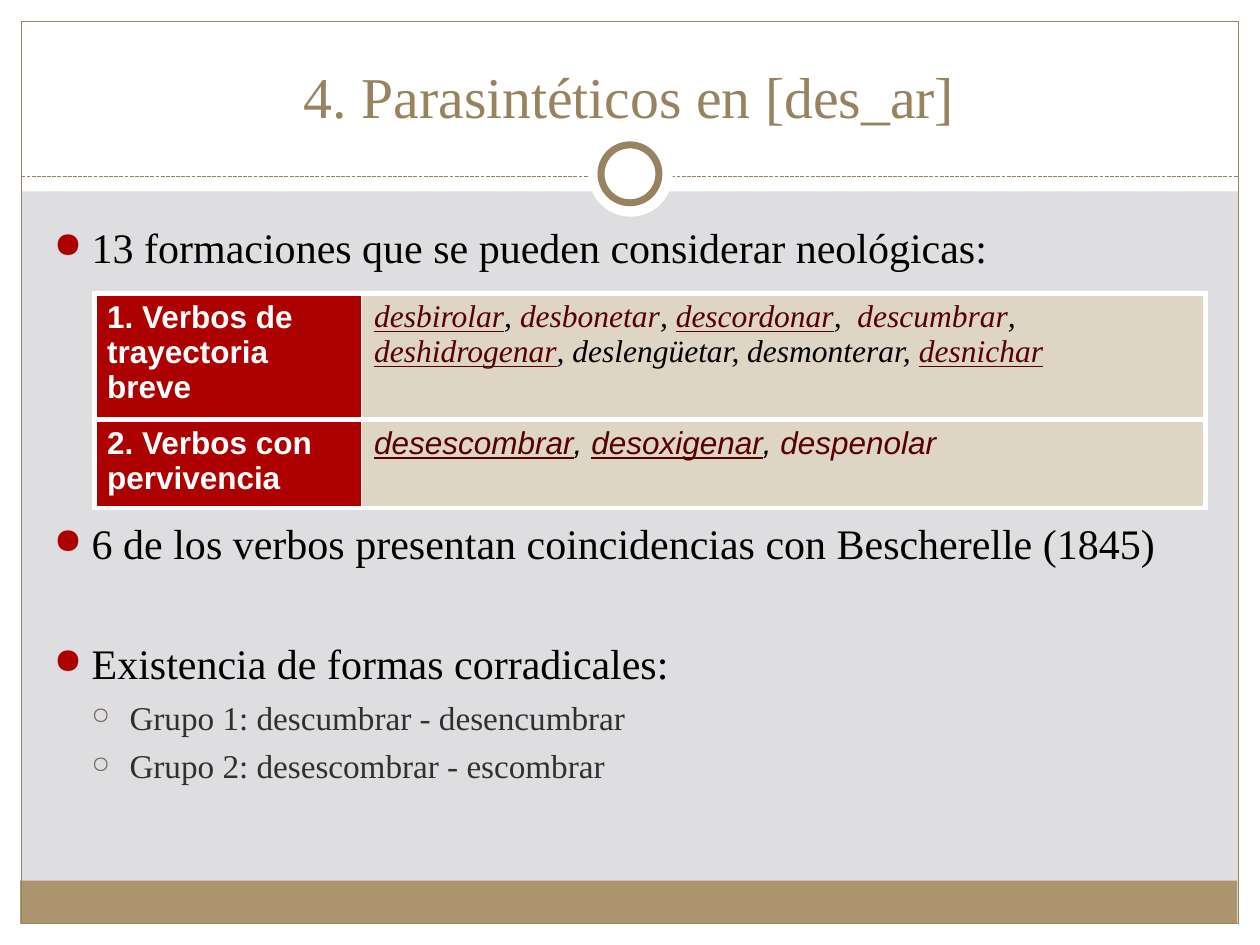
from typing import NamedTuple

from lxml import etree
from pptx import Presentation
from pptx.dml.color import RGBColor
from pptx.enum.dml import MSO_LINE
from pptx.enum.shapes import MSO_CONNECTOR, MSO_SHAPE
from pptx.enum.text import MSO_ANCHOR, PP_ALIGN
from pptx.oxml.ns import qn
from pptx.util import Inches, Pt

RECTANGLE, OVAL = MSO_SHAPE.RECTANGLE, MSO_SHAPE.OVAL
STRAIGHT = MSO_CONNECTOR.STRAIGHT
DASH = MSO_LINE.SQUARE_DOT
BOTTOM, CENTER = MSO_ANCHOR.BOTTOM, PP_ALIGN.CENTER
SERIF, SANS = "Times New Roman", "Arial"
COLORS = {
    "background": "DEDEE0", "white": "FFFFFF", "band": "AC956E",
    "frame": "988361", "title": "978360", "black": "000000",
    "red": "AD0101", "cell": "DED5C5", "verb": "560000",
    "detail": "303030", "detail bullet": "726056",
}


class Block(NamedTuple):
    left: float
    top: float
    width: float
    height: float
    fill: str | None = "white"
    line: str | None = None
    weight: float = 0.75
    kind: MSO_SHAPE = RECTANGLE


class Level(NamedTuple):
    indent: float
    size: float
    color: str
    bullet: str
    bullet_color: str
    bullet_percent: int


class Item(NamedTuple):
    text: str
    level: int
    space_before: float


class Verb(NamedTuple):
    text: str
    color: str = "verb"
    underline: bool = False


class Row(NamedTuple):
    heading: str
    font: str
    height: float
    verbs: list[Verb]


BLOCKS = [
    Block(0, 7.33, 10, 0.17),
    Block(0, 0, 10, 1.52),
    Block(0, 0, 0.17, 7.5),
    Block(9.83, 0, 0.17, 7.5),
    Block(0.16, 6.99, 9.66, 0.34, "band"),
    Block(0.17, 0.17, 9.66, 7.16, None, "frame"),
]
RING = [
    Block(4.67, 1.05, 0.67, 0.67, kind=OVAL),
    Block(4.77, 1.15, 0.46, 0.46, "white", "frame", 4, OVAL),
]
LEVELS = [
    Level(0.3, 24, "black", "●", "red", 85),
    Level(0.6, 19, "detail", "○", "detail bullet", 70),
]
ITEMS = [
    Item("13 formaciones que se pueden considerar neológicas:", 0, 0),
    Item("6 de los verbos presentan coincidencias con Bescherelle (1845)", 0, 140.4),
    Item("Existencia de formas corradicales:", 0, 39.8),
    Item("Grupo 1: descumbrar - desencumbrar", 1, 5),
    Item("Grupo 2: desescombrar - escombrar", 1, 5),
]
COMMA = Verb(", ", "black")
ROWS = [
    Row("1. Verbos de trayectoria breve", SERIF, 0.94, [
        Verb("desbirolar", underline=True), COMMA, Verb("desbonetar"), COMMA,
        Verb("descordonar", underline=True), Verb(",  ", "black"),
        Verb("descumbrar"), COMMA, Verb("deshidrogenar", underline=True),
        Verb(", deslengüetar, desmonterar, ", "black"),
        Verb("desnichar", underline=True),
    ]),
    Row("2. Verbos con pervivencia", SANS, 0.65, [
        Verb("desescombrar", underline=True), COMMA,
        Verb("desoxigenar", underline=True), COMMA, Verb("despenolar"),
    ]),
]
COLUMN_WIDTHS = [2.12, 6.7]


def rgb(name: str) -> RGBColor:
    return RGBColor.from_string(COLORS[name])


def set_font(font, name: str, size: float, color: str) -> None:
    font.name, font.size = name, Pt(size)
    font.color.rgb = rgb(color)


def draw_block(slide, block: Block) -> None:
    shape = slide.shapes.add_shape(
        block.kind, Inches(block.left), Inches(block.top),
        Inches(block.width), Inches(block.height))
    shape.shadow.inherit = False
    if block.fill:
        shape.fill.solid()
        shape.fill.fore_color.rgb = rgb(block.fill)
    else:
        shape.fill.background()
    if block.line:
        shape.line.color.rgb = rgb(block.line)
        shape.line.width = Pt(block.weight)
    else:
        shape.line.fill.background()


def draw_divider(slide) -> None:
    line = slide.shapes.add_connector(
        STRAIGHT, Inches(0.17), Inches(1.4), Inches(9.83), Inches(1.4))
    line.line.color.rgb = rgb("frame")
    line.line.width = Pt(0.75)
    line.line.dash_style = DASH
    etree.SubElement(line._element.spPr, qn("a:effectLst"))


def add_text_frame(slide, left: float, top: float, width: float, height: float):
    box = slide.shapes.add_textbox(
        Inches(left), Inches(top), Inches(width), Inches(height))
    box.text_frame.word_wrap = True
    return box.text_frame


def set_bullet(paragraph, level: Level) -> None:
    properties = paragraph._p.get_or_add_pPr()
    properties.set("marL", str(Inches(level.indent)))
    properties.set("indent", str(Inches(-0.3)))
    color = etree.SubElement(properties, qn("a:buClr"))
    etree.SubElement(color, qn("a:srgbClr"), val=COLORS[level.bullet_color])
    etree.SubElement(properties, qn("a:buSzPct"), val=str(level.bullet_percent * 1000))
    etree.SubElement(properties, qn("a:buChar"), char=level.bullet)


def draw_items(slide) -> None:
    frame = add_text_frame(slide, 0.33, 1.67, 9.3, 5)
    frame.margin_top = Inches(0.09)
    for index, item in enumerate(ITEMS):
        paragraph = frame.add_paragraph() if index else frame.paragraphs[0]
        level = LEVELS[item.level]
        paragraph.text = item.text
        paragraph.level = item.level
        paragraph.space_before = Pt(item.space_before)
        set_bullet(paragraph, level)
        set_font(paragraph.font, SERIF, level.size, level.color)


def style_cell(cell, fill: str, inner_side: str) -> None:
    properties = cell._tc.get_or_add_tcPr()
    for side in ("lnL", "lnR", "lnT", "lnB"):
        weight = 1 if side == inner_side else 3
        border = etree.SubElement(properties, qn(f"a:{side}"), w=str(Pt(weight)))
        solid = etree.SubElement(border, qn("a:solidFill"))
        etree.SubElement(solid, qn("a:srgbClr"), val=COLORS["white"])
    cell.fill.solid()
    cell.fill.fore_color.rgb = rgb(fill)


def draw_table(slide) -> None:
    table = slide.shapes.add_table(
        len(ROWS), len(COLUMN_WIDTHS), Inches(0.75), Inches(2.33),
        Inches(sum(COLUMN_WIDTHS)), Inches(sum(row.height for row in ROWS))).table
    for column, width in zip(table.columns, COLUMN_WIDTHS):
        column.width = Inches(width)
    for index, row in enumerate(ROWS):
        table.rows[index].height = Inches(row.height)
        heading, verbs = table.cell(index, 0), table.cell(index, 1)
        style_cell(heading, "red", "lnR")
        style_cell(verbs, "cell", "lnL")
        heading.text = row.heading
        paragraph = heading.text_frame.paragraphs[0]
        set_font(paragraph.font, SANS, 18, "white")
        paragraph.font.bold = True
        paragraph = verbs.text_frame.paragraphs[0]
        for verb in row.verbs:
            run = paragraph.add_run()
            run.text = verb.text
            set_font(run.font, row.font, 18, verb.color)
            run.font.bold, run.font.italic = False, True
            run.font.underline = verb.underline


def main() -> None:
    presentation = Presentation()
    presentation.slide_width, presentation.slide_height = Inches(10), Inches(7.5)
    slide = presentation.slides.add_slide(presentation.slide_layouts[6])
    slide.background.fill.solid()
    slide.background.fill.fore_color.rgb = rgb("background")

    # Frame, divider and ring
    for block in BLOCKS:
        draw_block(slide, block)
    draw_divider(slide)
    for block in RING:
        draw_block(slide, block)

    # Title
    frame = add_text_frame(slide, 0.33, 0.25, 9.33, 0.83)
    frame.vertical_anchor = BOTTOM
    title = frame.paragraphs[0]
    title.text, title.alignment = "4. Parasintéticos en [des_ar]", CENTER
    set_font(title.font, SERIF, 33, "title")

    # Bulleted list and table of verbs
    draw_items(slide)
    draw_table(slide)
    presentation.save("out.pptx")


if __name__ == "__main__":
    main()
